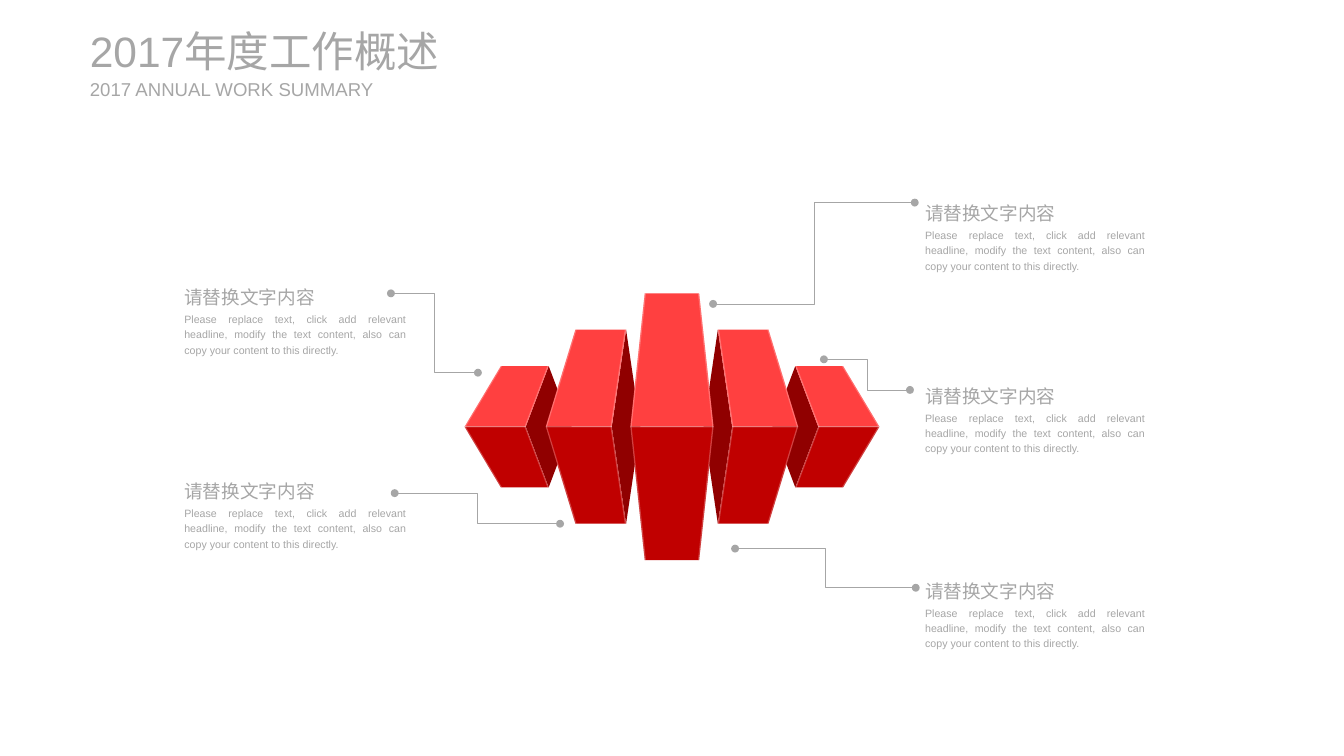
from lxml.etree import SubElement
from pptx import Presentation
from pptx.dml.color import RGBColor
from pptx.enum.shapes import MSO_CONNECTOR as CONN
from pptx.enum.text import MSO_ANCHOR as ANCHOR, MSO_AUTO_SIZE as AUTO, PP_ALIGN as ALIGN
from pptx.oxml.ns import qn
from pptx.util import Inches, Pt

COLORS = {"text": "A6A6A6", "top": "FF4040", "front": "C00000",
          "side": "900000", "edge": "FFFFFF"}
COLS, ROWS = 140.6, 79.1        # square grid cells of 0.1 inch
CELL = Inches(0.1)
MID_X, MID_Y = 70.3, 44.65      # centre of the block fan
EDGE = 0.13                     # thickness of the light edges

HEADING = "请替换文字内容"
BODY = ("Please replace text, click add relevant headline, modify the text "
        "content, also can copy your content to this directly.")

# Blocks, as distances from the centre: near and far edge at the middle,
# near and far edge at the top, tip of the dark side, half height
OUTER = (15.3, 21.7, 12.9, 17.9, 10.5, 6.35)
INNER = (6.3, 13.2, 4.8, 10.1, 3.3, 10.15)
CENTRE = (-4.35, 4.35, -2.85, 2.85, None, 13.95)

# Captions: left, heading width, body width; then the top
LEFT, RIGHT = (18.3, 16.5, 25.2), (95.8, 16.3, 25)
CAPTIONS = [(LEFT, 29), (LEFT, 49.3), (RIGHT, 20.2), (RIGHT, 59.7), (RIGHT, 39.3)]

# Leader lines: start column and row, end column and row
LEADERS = [(50, 39, 40.9, 30.7), (58.6, 54.8, 41.3, 51.6), (95.7, 21.2, 74.6, 31.8),
           (95.2, 40.8, 86.2, 37.6), (95.8, 61.5, 76.9, 57.4)]


def grid(*cells):
    return [round(c * CELL) for c in cells]


class Deck:
    font = "Arial"

    def __init__(self):
        self.prs = Presentation()
        self.prs.slide_width, self.prs.slide_height = grid(COLS, ROWS)
        self.s = self.prs.slides.add_slide(self.prs.slide_layouts[5])

    def color(self, name):
        return RGBColor.from_string(COLORS[name])

    def set_text(self, sp, text, size, align, spacing=1.0):
        tf = sp.text_frame
        tf.text = text
        tf.word_wrap = True
        p = tf.paragraphs[0]
        p.alignment, p.line_spacing = align, spacing
        font = p.runs[0].font
        font.name, font.size = self.font, Pt(size)
        font.color.rgb = self.color("text")
        return tf

    def header(self, sp, text, size):
        tf = self.set_text(sp, text, size, ALIGN.LEFT)
        tf.auto_size = AUTO.NONE
        tf.vertical_anchor = ANCHOR.MIDDLE
        tf.margin_left = tf.margin_right = tf.margin_top = tf.margin_bottom = 0

    def title(self, box, text, size):
        sp = self.s.shapes.title
        sp.left, sp.top, sp.width, sp.height = grid(*box)
        self.header(sp, text, size)

    def subtitle(self, box, text, size):
        self.header(self.s.shapes.add_textbox(*grid(*box)), text, size)

    def paragraph(self, box, text, size):
        sp = self.s.shapes.add_textbox(*grid(*box))
        tf = self.set_text(sp, text, size, ALIGN.JUSTIFY, 1.2)
        tf.auto_size = AUTO.SHAPE_TO_FIT_TEXT

    def panel(self, points, side, color, alpha=None):
        """Polygon around the fan's centre; side -1 mirrors it to the left."""
        start, *rest = [grid(MID_X + side * x, MID_Y + y) for x, y in points]
        builder = self.s.shapes.build_freeform(*start)
        builder.add_line_segments(rest, close=True)
        sp = builder.convert_to_shape()
        sp.shadow.inherit = False
        sp.fill.solid()
        sp.fill.fore_color.rgb = self.color(color)
        sp.line.fill.background()
        if alpha:
            clr = sp._element.spPr.find(qn("a:solidFill")).find(qn("a:srgbClr"))
            SubElement(clr, qn("a:alpha"), val=str(alpha * 1000))

    def block(self, shape, side):
        near, far, top_near, top_far, tip, h = shape
        if tip is not None:
            self.panel([(near, 0), (top_near, -h), (tip, 0), (top_near, h)], side, "side")
        for color, y in (("top", -h), ("front", h)):
            self.panel([(near, 0), (top_near, y), (top_far, y), (far, 0)], side, color)

    def edges(self, shape, side):
        near, far, top_near, top_far, _, h = shape
        self.panel([(near, -EDGE / 2), (far, -EDGE / 2), (far, EDGE / 2), (near, EDGE / 2)],
                   side, "edge", 25)
        for mid, top, dx in ((near, top_near, EDGE), (far, top_far, -EDGE)):
            self.panel([(top, -h), (mid, 0), (top, h),
                        (top + dx, h), (mid + dx, 0), (top + dx, -h)], side, "edge", 25)

    def leader(self, ends):
        sp = self.s.shapes.add_connector(CONN.ELBOW, *grid(*ends))
        sp.line.color.rgb = self.color("text")
        sp.line.width = Pt(0.5)
        ln = sp._element.spPr.find(qn("a:ln"))
        for end in ("a:headEnd", "a:tailEnd"):
            SubElement(ln, qn(end), type="oval")
        SubElement(sp._element.spPr, qn("a:effectLst"))


def main():
    deck = Deck()

    # Header
    deck.title((9.4, 2.6, 43.2, 5.4), "2017年度工作概述", 32)
    deck.subtitle((9.4, 8.1, 30.7, 2.4), "2017 ANNUAL WORK SUMMARY", 14)

    # Fan of blocks, then the light edges on top of it
    fan = [(OUTER, -1), (INNER, -1), (OUTER, 1), (INNER, 1), (CENTRE, 1)]
    for draw in (deck.block, deck.edges):
        for shape, side in fan:
            draw(shape, side)

    # Captions
    for (left, heading_width, body_width), top in CAPTIONS:
        deck.paragraph((left, top + 3, body_width, 5.7), BODY, 8)
        deck.paragraph((left, top, heading_width, 3.6), HEADING, 14)

    # Leader lines
    for ends in LEADERS:
        deck.leader(ends)

    deck.prs.save("out.pptx")


if __name__ == "__main__":
    main()
